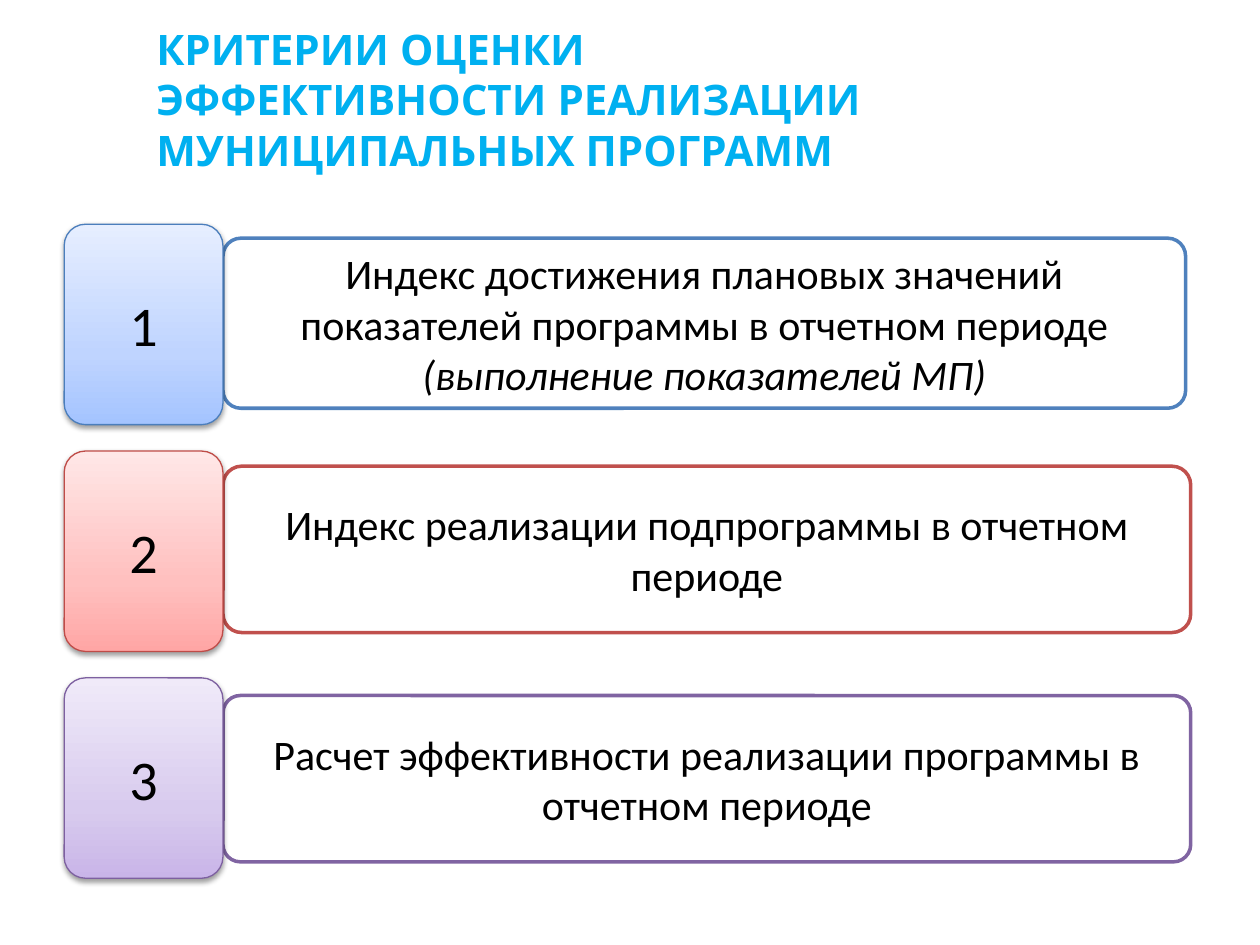
from pptx import Presentation
from pptx.dml.color import RGBColor
from pptx.enum import shapes, text
from pptx.oxml import parse_xml
from pptx.oxml.ns import nsdecls, qn
from pptx.util import Inches, Pt

COLORS = {"title": "00B0F0", "text": "000000", "panel": "FFFFFF"}
TITLE = "КРИТЕРИИ ОЦЕНКИ \vЭФФЕКТИВНОСТИ РЕАЛИЗАЦИИ МУНИЦИПАЛЬНЫХ ПРОГРАММ"

# Panel: (left, top, width, height), corner ratio; gradient runs bottom to top
CRITERIA = [
    {"runs": [("Индекс достижения плановых значений показателей программы в отчетном периоде ", False),
              ("(выполнение показателей МП)", True)],
     "panel": (1.77, 1.89, 7.64, 1.35), "corner": 0.105, "border": "4F81BD",
     "badge_border": "4B7EBC", "gradient": ("A4C4FF", "BFD4FF", "E6EEFF")},
    {"runs": [("Индекс реализации подпрограммы в отчетном периоде", False)],
     "panel": (1.77, 3.7, 7.68, 1.32), "corner": 0.112, "border": "C0504D",
     "badge_border": "BF4C48", "gradient": ("FFA6A5", "FFC0BF", "FFE7E7")},
    {"runs": [("Расчет эффективности реализации программы в отчетном периоде", False)],
     "panel": (1.77, 5.52, 7.68, 1.32), "corner": 0.104, "border": "8064A2",
     "badge_border": "7D60A0", "gradient": ("C9B5E8", "D8CBEE", "F0EAF9")},
]
GRADIENT_STOPS = (0, 35, 100)
BADGE_LEFT, BADGE_TOP, BADGE_WIDTH, BADGE_HEIGHT = 0.51, 1.78, 1.26, 1.59
BADGE_STEP = 1.8


def rgb(value):
    return RGBColor.from_string(value)


def set_font(font, name, size, color):
    font.name = name
    font.size = Pt(size)
    font.color.rgb = rgb(color)


def add_rounded_box(slide, box, corner, border, border_width, runs, size):
    shape = slide.shapes.add_shape(
        shapes.MSO_SHAPE.ROUNDED_RECTANGLE, *map(Inches, box))
    shape.adjustments[0] = corner
    shape.line.color.rgb = rgb(border)
    shape.line.width = Pt(border_width)
    shape.shadow.inherit = False
    frame = shape.text_frame
    frame.word_wrap = True
    frame.vertical_anchor = text.MSO_ANCHOR.MIDDLE
    paragraph = frame.paragraphs[0]
    paragraph.alignment = text.PP_ALIGN.CENTER
    set_font(paragraph.font, "Calibri", size, COLORS["text"])
    for words, italic in runs:
        run = paragraph.add_run()
        run.text = words
        if italic:
            run.font.italic = True
    return shape


def fill_gradient(shape, colors):
    shape.fill.gradient()
    shape.fill.gradient_angle = 90
    stops = "".join(
        f'<a:gs pos="{position * 1000}"><a:srgbClr val="{color}"/></a:gs>'
        for position, color in zip(GRADIENT_STOPS, colors))
    old = next(shape.element.spPr.iter(qn("a:gsLst")))
    old.getparent().replace(
        old, parse_xml(f'<a:gsLst {nsdecls("a")}>{stops}</a:gsLst>'))


def add_shadow(shape):
    shape.element.spPr.find(qn("a:effectLst")).append(parse_xml(
        f'<a:outerShdw {nsdecls("a")} blurRad="{Pt(3.1)}" dist="{Pt(1.6)}" '
        'dir="5400000" rotWithShape="0"><a:srgbClr val="000000">'
        '<a:alpha val="38000"/></a:srgbClr></a:outerShdw>'))


def main():
    deck = Presentation()
    deck.slide_width, deck.slide_height = Inches(10), Inches(7.5)
    slide = deck.slides.add_slide(deck.slide_layouts[5])

    title = slide.shapes.title
    title.left, title.top, title.width, title.height = map(
        Inches, (1.14, 0.13, 8.12, 1.31))
    title.text_frame.text = TITLE
    title.text_frame.word_wrap = True
    title.text_frame.auto_size = text.MSO_AUTO_SIZE.NONE
    title.text_frame.vertical_anchor = text.MSO_ANCHOR.MIDDLE
    heading = title.text_frame.paragraphs[0]
    heading.alignment = text.PP_ALIGN.LEFT
    set_font(heading.font, "League Spartan", 24, COLORS["title"])
    heading.font.bold = True

    for criterion in CRITERIA:
        panel = add_rounded_box(slide, criterion["panel"], criterion["corner"],
                                criterion["border"], 2, criterion["runs"], 24)
        panel.fill.solid()
        panel.fill.fore_color.rgb = rgb(COLORS["panel"])

    for index, criterion in enumerate(CRITERIA):
        box = (BADGE_LEFT, BADGE_TOP + index * BADGE_STEP, BADGE_WIDTH, BADGE_HEIGHT)
        badge = add_rounded_box(slide, box, 0.134, criterion["badge_border"], 0.75,
                                [(str(index + 1), False)], 32)
        fill_gradient(badge, criterion["gradient"])
        add_shadow(badge)

    deck.save("out.pptx")


if __name__ == "__main__":
    main()
